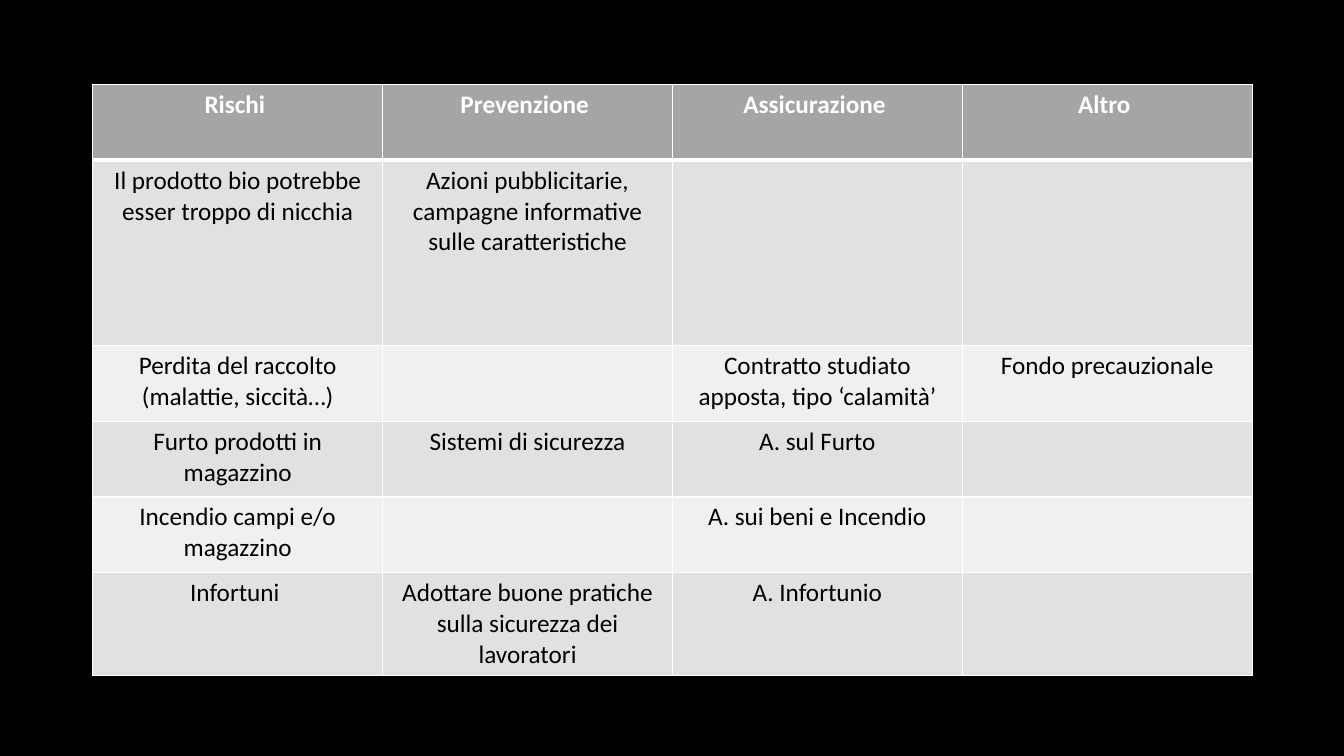
"""Builds a slide with a table of farm risks and the ways to cover them."""
from lxml.etree import SubElement
from pptx import Presentation
from pptx.dml.color import RGBColor
from pptx.enum.text import PP_ALIGN
from pptx.oxml.ns import qn
from pptx.util import Inches, Pt

COLOURS = {
    "background": "000000",
    "header": "A5A5A5",
    "odd_row": "E1E1E1",
    "even_row": "F0F0F0",
    "border": "FFFFFF",
    "header_text": "FFFFFF",
    "body_text": "000000",
}
RISKS = [
    ["Rischi ", "Prevenzione ", "Assicurazione ", "Altro "],
    ["Il prodotto bio potrebbe esser troppo di nicchia",
     "Azioni pubblicitarie, campagne informative sulle caratteristiche", "", ""],
    ["Perdita del raccolto (malattie, siccità…)", "",
     "Contratto studiato apposta, tipo ‘calamità’", "Fondo precauzionale"],
    ["Furto prodotti in magazzino", "Sistemi di sicurezza", "A. sul Furto", ""],
    ["Incendio campi e/o magazzino", "", "A. sui beni e Incendio", ""],
    ["Infortuni ", "Adottare buone pratiche sulla sicurezza dei lavoratori",
     "A. Infortunio", ""],
]
ROW_HEIGHTS = [0.75, 1.84, 0.75, 0.75, 0.75, 1.02]
TABLE_WIDTH = 11.5


def add_border(cell, side, points):
    """Draw one side of a cell; call it before the cell is filled."""
    line = SubElement(cell._tc.get_or_add_tcPr(), qn(f"a:ln{side}"), w=str(Pt(points)))
    fill = SubElement(line, qn("a:solidFill"))
    SubElement(fill, qn("a:srgbClr"), val=COLOURS["border"])


deck = Presentation()
deck.slide_width, deck.slide_height = Inches(13.33), Inches(7.5)
slide = deck.slides.add_slide(deck.slide_layouts[6])
slide.background.fill.solid()
slide.background.fill.fore_color.rgb = RGBColor.from_string(COLOURS["background"])

risk_table = slide.shapes.add_table(
    len(RISKS), len(RISKS[0]), Inches(0.92), Inches(0.84),
    Inches(TABLE_WIDTH), Inches(sum(ROW_HEIGHTS))).table

for column in risk_table.columns:
    column.width = Inches(TABLE_WIDTH / len(RISKS[0]))

for row, (texts, height) in enumerate(zip(RISKS, ROW_HEIGHTS)):
    risk_table.rows[row].height = Inches(height)
    is_header = row == 0
    band = "header" if is_header else "odd_row" if row % 2 else "even_row"
    text_colour = COLOURS["header_text" if is_header else "body_text"]
    borders = {"L": 1, "R": 1, "T": 3 if row == 1 else 1, "B": 3 if is_header else 1}
    for col, text in enumerate(texts):
        cell = risk_table.cell(row, col)
        for side, points in borders.items():
            add_border(cell, side, points)
        cell.fill.solid()
        cell.fill.fore_color.rgb = RGBColor.from_string(COLOURS[band])
        cell.text_frame.text = text
        paragraph = cell.text_frame.paragraphs[0]
        paragraph.alignment = PP_ALIGN.CENTER
        for run in paragraph.runs:
            run.font.name = "Calibri"
            run.font.size = Pt(18)
            run.font.bold = is_header
            run.font.color.rgb = RGBColor.from_string(text_colour)

deck.save("out.pptx")
